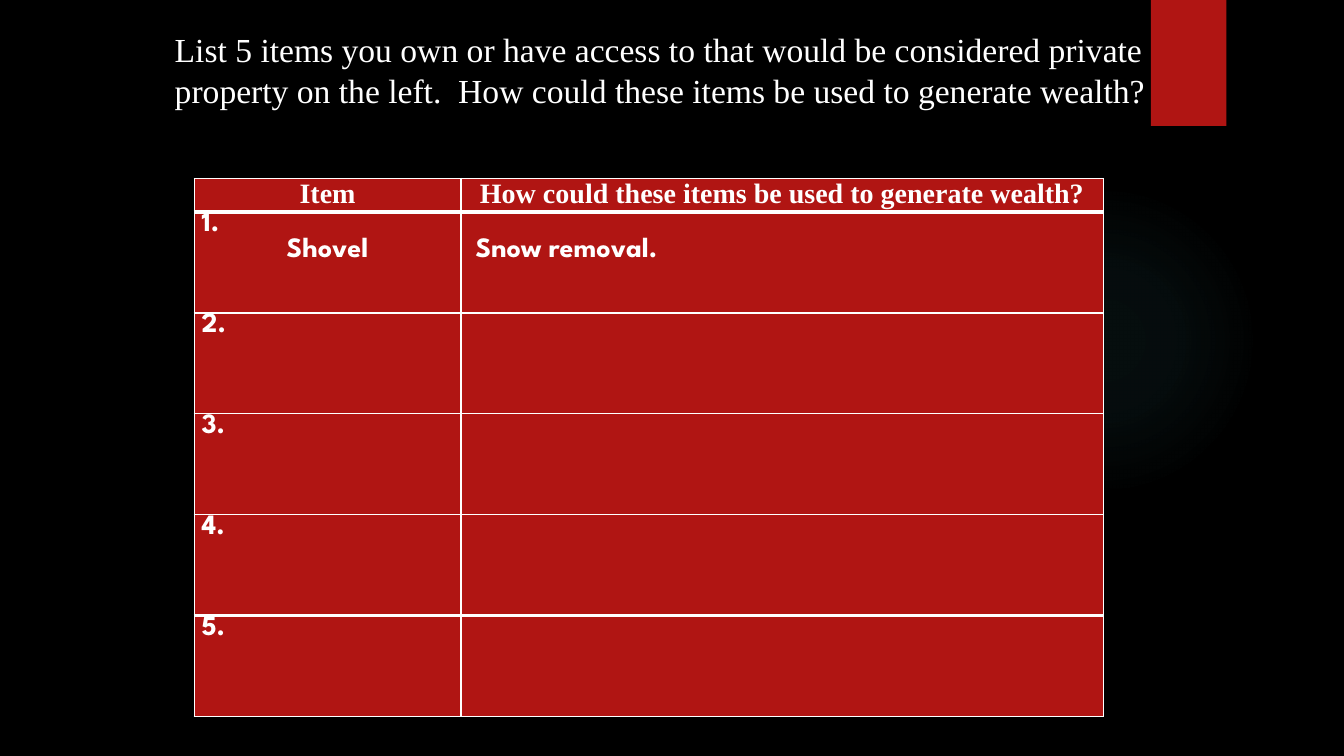
from lxml import etree
from pptx import Presentation
from pptx import util as u
from pptx.dml.color import RGBColor
from pptx.enum import shapes, text
from pptx.oxml import ns

BLACK = RGBColor(0, 0, 0)
WHITE = RGBColor(255, 255, 255)
RED = RGBColor(0xB0, 0x15, 0x13)
TEAL = RGBColor(0x50, 0xB9, 0xC1)
SERIF = "Times New Roman"
SANS = "League Spartan"
TITLE = ("List 5 items you own or have access to that would be considered "
         "private property on the left.  How could these items be used to "
         "generate wealth?")
HEADS = ["Item", "How could these items be used to generate wealth?"]
ITEMS = [("Shovel", "Snow removal."), ("", ""), ("", ""), ("", ""), ("", "")]
COLS = [254, 612]
HEAD = 32
ROW = 96
LINE = 24


def px(n):
    return u.Emu(n * 9525)


def style(par, size, face, bold=False, align=text.PP_ALIGN.LEFT):
    par.alignment = align
    font = par.font
    font.size = u.Pt(size)
    font.name = face
    font.bold = bold
    font.color.rgb = WHITE
    for run in par.runs:
        run.font.size = u.Pt(size)
        run.font.name = face
        run.font.bold = bold
        run.font.color.rgb = WHITE


def plain(slide, kind, box):
    shape = slide.shapes.add_shape(kind, *map(px, box))
    shape.shadow.inherit = False
    shape.line.fill.background()
    return shape


def glow(slide, box):
    shape = plain(slide, shapes.MSO_SHAPE.OVAL, box)
    shape.fill.gradient()
    grad = shape._element.spPr.find(ns.qn("a:gradFill"))
    for child in list(grad):
        grad.remove(child)
    stops = etree.SubElement(grad, ns.qn("a:gsLst"))
    for pos, alpha in [(0, 7), (36, 6), (69, 0)]:
        stop = etree.SubElement(stops, ns.qn("a:gs"), pos=str(pos * 1000))
        color = etree.SubElement(stop, ns.qn("a:srgbClr"), val=str(TEAL))
        etree.SubElement(color, ns.qn("a:alpha"), val=str(alpha * 1000))
    way = etree.SubElement(grad, ns.qn("a:path"), path="circle")
    etree.SubElement(way, ns.qn("a:fillToRect"),
                     dict.fromkeys("ltrb", "50000"))


def ribbon(slide, box):
    shape = plain(slide, shapes.MSO_SHAPE.RECTANGLE, box)
    shape.fill.solid()
    shape.fill.fore_color.rgb = RED


def title(slide, box):
    frame = slide.shapes.add_textbox(*map(px, box)).text_frame
    frame.word_wrap = True
    frame.text = TITLE
    style(frame.paragraphs[0], 24, SERIF)


def border(cell, top, base):
    props = cell._tc.get_or_add_tcPr()
    for side, width in zip("LRTB", [1, 1, top, base]):
        line = etree.SubElement(props, ns.qn("a:ln" + side),
                                w=str(u.Pt(width)))
        fill = etree.SubElement(line, ns.qn("a:solidFill"))
        etree.SubElement(fill, ns.qn("a:srgbClr"), val=str(WHITE))


def dress(cell, row, last):
    border(cell, 3 if row in (1, last) else 1,
           3 if row in (0, last - 1) else 1)
    cell.fill.solid()
    cell.fill.fore_color.rgb = RED
    cell.margin_left = cell.margin_right = px(7)
    cell.margin_top = cell.margin_bottom = 0


def grid(slide, box):
    last = len(ITEMS)
    table = slide.shapes.add_table(last + 1, len(COLS), *map(px, box)).table
    table.horz_banding = False
    for col, width in zip(table.columns, COLS):
        col.width = px(width)
    for i, row in enumerate(table.rows):
        row.height = px(ROW if i else HEAD)
        for cell in row.cells:
            dress(cell, i, last)
    for i, words in enumerate(HEADS):
        cell = table.cell(0, i)
        cell.text = words
        style(cell.text_frame.paragraphs[0], 20, SERIF, True,
              text.PP_ALIGN.CENTER)
    for i, (item, use) in enumerate(ITEMS, 1):
        left, right = table.cell(i, 0), table.cell(i, 1)
        left.text = f"{i}.\n{item}" if item else f"{i}."
        right.text = use
        right.margin_left = px(14)
        right.margin_top = px(LINE)
        for par in left.text_frame.paragraphs:
            style(par, 20, SANS, True)
        if item:
            par.alignment = text.PP_ALIGN.CENTER
        style(right.text_frame.paragraphs[0], 20, SANS, True)


def main():
    deck = Presentation()
    deck.slide_width, deck.slide_height = px(1280), px(720)
    slide = deck.slides.add_slide(deck.slide_layouts[6])
    slide.background.fill.solid()
    slide.background.fill.fore_color.rgb = BLACK
    glow(slide, (903, 176, 296, 296))
    ribbon(slide, (1096, 0, 72, 120))
    title(slide, (157, 23, 955, 87))
    grid(slide, (185, 170, sum(COLS), HEAD + ROW * len(ITEMS)))
    deck.save("out.pptx")


if __name__ == "__main__":
    main()
